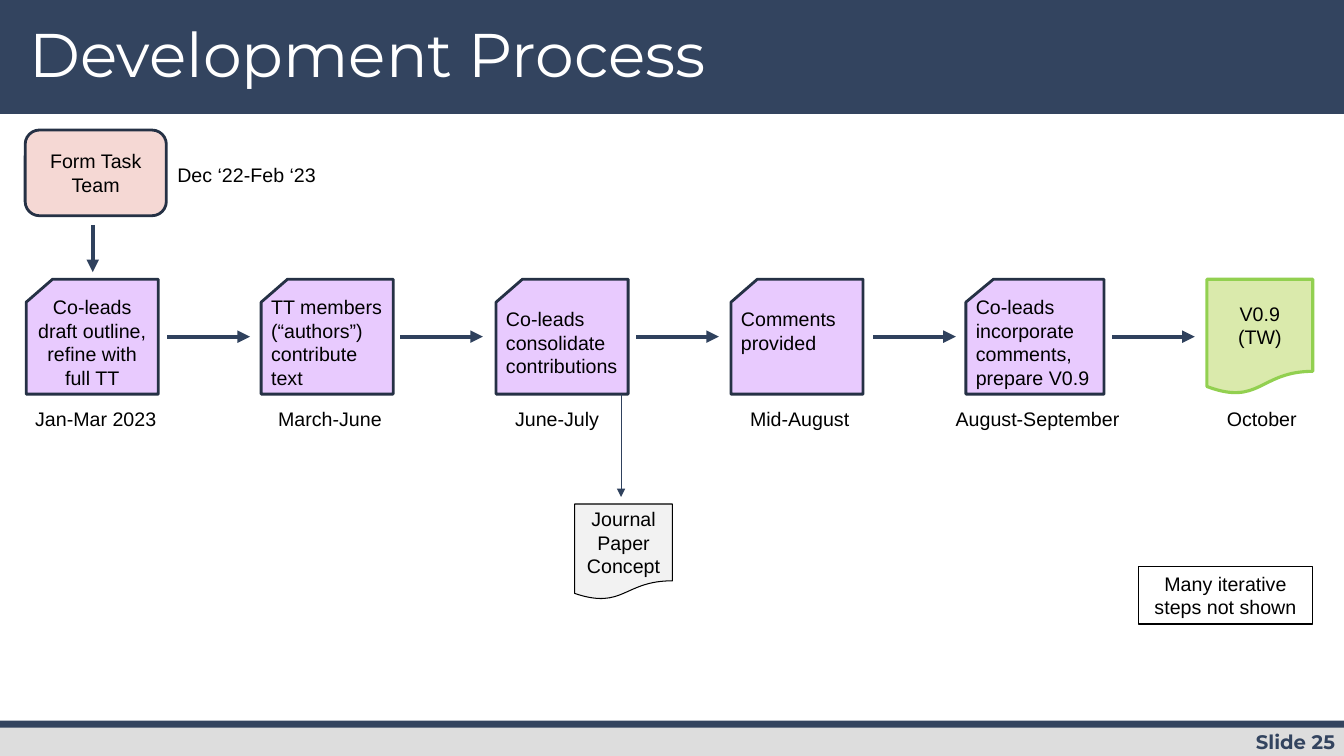
"""Build the Development Process timeline slide."""
from lxml.etree import SubElement
from pptx import Presentation
from pptx.dml.color import RGBColor
from pptx.enum.shapes import MSO_CONNECTOR as LINE, MSO_SHAPE as SHAPE
from pptx.enum.text import MSO_ANCHOR as ANCHOR, PP_ALIGN as ALIGN
from pptx.oxml.ns import qn
from pptx.util import Inches, Pt

NAVY = RGBColor(0x33, 0x44, 0x5F)
ARROW = RGBColor(0x2F, 0x41, 0x5D)
OUTLINE = RGBColor(0x25, 0x31, 0x45)
FOOTER_GRAY = RGBColor(0xDD, 0xDD, 0xDD)
PAPER_GRAY = RGBColor(0xF2, 0xF2, 0xF2)
PURPLE = RGBColor(0xE8, 0xCA, 0xFE)
PINK = RGBColor(0xF5, 0xD8, 0xD4)
PALE_GREEN = RGBColor(0xDA, 0xEA, 0xAC)
GREEN = RGBColor(0x92, 0xD0, 0x50)
BLACK = RGBColor(0, 0, 0)
WHITE = RGBColor(0xFF, 0xFF, 0xFF)

deck = Presentation()
deck.slide_width, deck.slide_height = Inches(13.33), Inches(7.5)
page = deck.slides.add_slide(deck.slide_layouts[5])


def add_box(kind, place, fill=None, line=None, weight=0):
    box = page.shapes.add_shape(kind, *map(Inches, place))
    box.shadow.inherit = False
    if fill is None:
        box.fill.background()
    else:
        box.fill.solid()
        box.fill.fore_color.rgb = fill
    if line is None:
        box.line.fill.background()
    else:
        box.line.color.rgb = line
        box.line.width = Pt(weight)
    return box


def write(box, lines, align=ALIGN.LEFT, anchor=ANCHOR.TOP, font="Arial", size=14, color=BLACK, bold=False):
    frame = box.text_frame
    frame.vertical_anchor = anchor
    for index, line in enumerate(lines):
        para = frame.paragraphs[0] if index == 0 else frame.add_paragraph()
        para.alignment = align
        span = para.add_run()
        span.text = line
        span.font.name, span.font.size = font, Pt(size)
        span.font.color.rgb, span.font.bold = color, bold


for place, fill in [
    ((0, 0, 13.33, 1.13), NAVY),
    ((0, 7.19, 13.33, 0.31), FOOTER_GRAY),
    ((0, 7.15, 13.33, 0.07), NAVY),
]:
    add_box(SHAPE.RECTANGLE, place, fill)

title = page.shapes.title
title.left, title.top, title.width, title.height = map(Inches, (0.19, 0.19, 10.27, 0.85))
write(title, ["Development Process"], font="Montserrat", size=44, color=WHITE)
title.text_frame.paragraphs[0].line_spacing = 0.9
title.element.getparent().append(title.element)

number = page.shapes.add_textbox(*map(Inches, (11.23, 7.19, 2.11, 0.34)))
number.text_frame.word_wrap = True
write(number, ["Slide 25"], ALIGN.RIGHT, font="Montserrat", color=NAVY, bold=True)

cards = [
    ("Co-leads draft outline, refine with full TT", 1.31, ALIGN.CENTER, ANCHOR.BOTTOM),
    ("TT members (“authors”) contribute text", 1.31, ALIGN.LEFT, ANCHOR.BOTTOM),
    ("Co-leads consolidate contributions", 1.31, ALIGN.LEFT, ANCHOR.TOP),
    ("Comments provided", 1.31, ALIGN.LEFT, ANCHOR.TOP),
    ("Co-leads incorporate comments, prepare V0.9", 1.37, ALIGN.LEFT, ANCHOR.BOTTOM),
]
for step, (text, width, align, anchor) in enumerate(cards):
    card = add_box(SHAPE.FLOWCHART_CARD, (0.26 + 2.33 * step, 2.77, width, 1.14), PURPLE, OUTLINE, 2)
    write(card, [text], align, anchor)

centered_boxes = [
    (SHAPE.FLOWCHART_ALTERNATE_PROCESS, (0.25, 1.29, 1.4, 0.85), PINK, OUTLINE, 2, ["Form Task Team"]),
    (SHAPE.FLOWCHART_DOCUMENT, (11.97, 2.77, 1.05, 1.14), PALE_GREEN, GREEN, 2.25, ["V0.9", "(TW)"]),
    (SHAPE.FLOWCHART_DOCUMENT, (5.7, 5, 0.97, 0.95), PAPER_GRAY, BLACK, 0.75, ["Journal Paper", "Concept"]),
    (SHAPE.RECTANGLE, (11.29, 5.62, 1.73, 0.57), None, BLACK, 1, ["Many iterative steps not shown"]),
]
for kind, place, fill, line, weight, lines in centered_boxes:
    write(add_box(kind, place, fill, line, weight), lines, ALIGN.CENTER, ANCHOR.MIDDLE)

dates = [
    ("Dec ‘22-Feb ‘23", 1.66, 1.57, 1.58),
    ("Jan-Mar 2023", 0.25, 3.99, 1.41),
    ("March-June", 2.66, 3.99, 1.23),
    ("June-July", 5.01, 3.99, 1.04),
    ("Mid-August", 7.34, 3.99, 1.19),
    ("August-September", 9.38, 3.99, 1.83),
    ("October", 12.07, 3.99, 0.9),
]
for text, left, top, width in dates:
    label = page.shapes.add_textbox(*map(Inches, (left, top, width, 0.34)))
    label.text_frame.word_wrap = False
    write(label, [text])

arrows = [(left, 3.34, left + 0.82, 3.34, 3) for left in (1.66, 3.97, 6.31, 8.66, 11.03)]
arrows += [(0.92, 2.23, 0.92, 2.7, 3), (6.16, 3.91, 6.16, 4.93, 0.75)]
for *ends, weight in arrows:
    arrow = page.shapes.add_connector(LINE.STRAIGHT, *map(Inches, ends))
    arrow.line.color.rgb = ARROW
    arrow.line.width = Pt(weight)
    SubElement(arrow.line._get_or_add_ln(), qn("a:tailEnd"), type="triangle")
    SubElement(arrow.element.spPr, qn("a:effectLst"))

deck.save("out.pptx")
